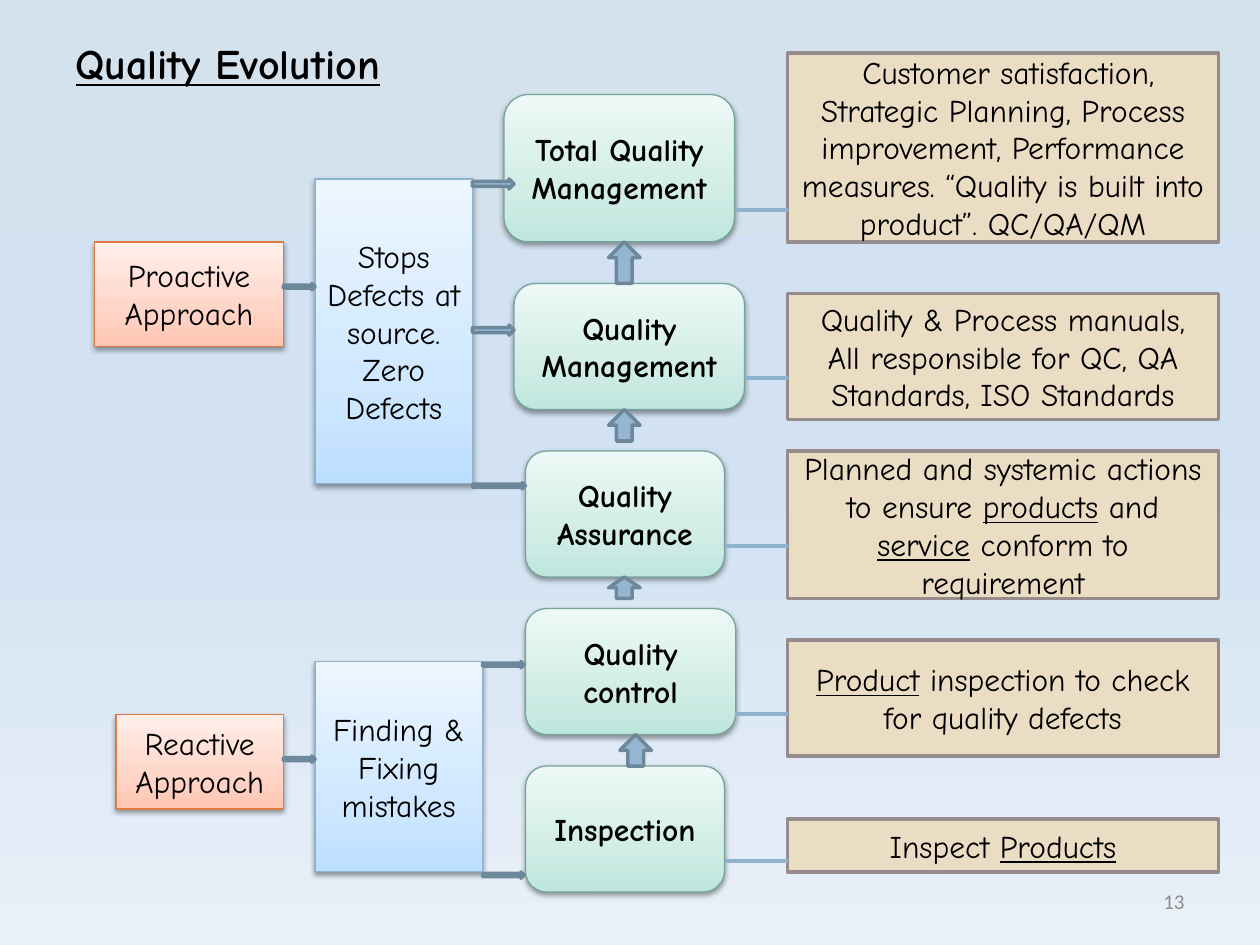
from dataclasses import dataclass

from lxml import etree
from pptx import Presentation
from pptx.dml.color import RGBColor
from pptx.enum import shapes, text
from pptx.oxml.ns import qn
from pptx.util import Inches, Pt

COLORS = {
    "text": "000000", "number": "8C8C8C", "note": "EBDDC3", "note_line": "968C8C",
    "arrow": "94B6D2", "arrow_line": "6D879B", "link": "8FB2CF",
}
BACKGROUND = [(0, "D4E2ED"), (50, "D2E2F2"), (100, "E8F0F8")]
FONT = "Comic Neue"
KIND = shapes.MSO_SHAPE


@dataclass(frozen=True)
class Style:
    kind: int
    stops: tuple
    line: str
    bold: bool = False


@dataclass(frozen=True)
class Box:
    x: float
    y: float
    w: float
    h: float
    words: str


@dataclass(frozen=True)
class Arrow:
    x: float
    y: float
    w: float
    h: float


def three_stops(*colors: str) -> tuple:
    return tuple(zip((0, 35, 100), colors))


STAGE = Style(KIND.ROUNDED_RECTANGLE, three_stops("BEE6DC", "D1EDE6", "EDF9F6"), "77A49A", True)
METHOD = Style(KIND.RECTANGLE, three_stops("BDDFFF", "D0E8FF", "EDF6FF"), "8FB2CF")
APPROACH = Style(KIND.RECTANGLE, three_stops("FFC5B1", "FFD5C8", "FFEFEA"), "DC7C42")

GRADIENT_BOXES = [
    (STAGE, [
        Box(4, 0.75, 1.83, 1.17, "Total Quality Management"),
        Box(4.08, 2.25, 1.83, 1, "Quality Management"),
        Box(4.17, 3.58, 1.58, 1, "Quality Assurance"),
        Box(4.17, 4.83, 1.67, 1, "Quality control"),
        Box(4.17, 6.08, 1.58, 1, "Inspection"),
    ]),
    (METHOD, [
        Box(2.5, 1.42, 1.25, 2.42, "Stops Defects at source.\nZero Defects"),
        Box(2.5, 5.25, 1.33, 1.67, "Finding & Fixing mistakes"),
    ]),
    (APPROACH, [
        Box(0.75, 1.92, 1.5, 0.83, "Proactive Approach"),
        Box(0.92, 5.67, 1.33, 0.75, "Reactive Approach"),
    ]),
]
NOTE_X, NOTE_W = 6.25, 3.42
NOTES = [
    (0.42, 1.5, " Customer satisfaction, Strategic Planning, Process improvement, "
                "Performance measures. “Quality is built into product”. QC/QA/QM"),
    (2.33, 1, "Quality & Process manuals, All responsible for QC, QA Standards, ISO Standards"),
    (3.58, 1.17, "Planned and systemic actions to ensure _products_ and _service_ "
                 "conform to requirement"),
    (5.08, 0.92, "_Product_ inspection to check for quality defects"),
    (6.5, 0.42, "Inspect _Products_"),
]
RIGHT_ARROWS = [
    Arrow(3.75, 1.42, 0.33, 0.08), Arrow(3.75, 2.58, 0.33, 0.08),
    Arrow(3.75, 3.83, 0.42, 0.05), Arrow(3.83, 5.25, 0.33, 0.05),
    Arrow(3.83, 6.92, 0.33, 0.05), Arrow(2.25, 2.25, 0.25, 0.05),
    Arrow(2.25, 6, 0.25, 0.05),
]
UP_ARROWS = [
    Arrow(4.83, 1.92, 0.25, 0.33), Arrow(4.83, 3.25, 0.25, 0.25),
    Arrow(4.83, 4.58, 0.25, 0.17), Arrow(4.92, 5.83, 0.25, 0.25),
]
LINKS = [(5.83, 1.67), (5.92, 3), (5.75, 4.33), (5.83, 5.67), (5.75, 6.83)]


def rgb(value: str) -> RGBColor:
    return RGBColor.from_string(value)


def set_gradient(fill, element, stops, angle: int) -> None:
    fill.gradient()
    fill.gradient_angle = angle
    stop_list = next(element.iter(qn("a:gsLst")))
    for old in list(stop_list):
        stop_list.remove(old)
    for position, color in stops:
        gs = etree.SubElement(stop_list, qn("a:gs"), pos=str(position * 1000))
        etree.SubElement(gs, qn("a:srgbClr"), val=color)


def add_shadow(sp) -> None:
    effects = sp._element.spPr.find(qn("a:effectLst"))
    outer = etree.SubElement(effects, qn("a:outerShdw"), blurRad="40000", dist="20000",
                             dir="5400000", rotWithShape="0")
    color = etree.SubElement(outer, qn("a:srgbClr"), val="000000")
    etree.SubElement(color, qn("a:alpha"), val="38000")


def add_shape(s, kind, x: float, y: float, w: float, h: float, line: str, width: float):
    sp = s.shapes.add_shape(kind, Inches(x), Inches(y), Inches(w), Inches(h))
    sp.shadow.inherit = False
    sp.line.color.rgb = rgb(line)
    sp.line.width = Pt(width)
    return sp


def write(tf, words: str, size: int = 18, bold: bool = False, color: str = "text",
          font: str = FONT, align=text.PP_ALIGN.CENTER,
          anchor=text.MSO_ANCHOR.MIDDLE) -> None:
    tf.word_wrap = True
    tf.vertical_anchor = anchor
    for i, row in enumerate(words.split("\n")):
        p = tf.add_paragraph() if i else tf.paragraphs[0]
        p.alignment = align
        p.font.name, p.font.size, p.font.bold = font, Pt(size), bold
        p.font.color.rgb = rgb(COLORS[color])
        for j, part in enumerate(row.split("_")):
            if part:
                r = p.add_run()
                r.text = part
                if j % 2:
                    r.font.underline = True


def add_gradient_box(s, box: Box, style: Style) -> None:
    sp = add_shape(s, style.kind, box.x, box.y, box.w, box.h, style.line, 0.75)
    set_gradient(sp.fill, sp._element, style.stops, 90)
    add_shadow(sp)
    write(sp.text_frame, box.words, bold=style.bold)


def add_note(s, y: float, h: float, words: str) -> None:
    sp = add_shape(s, KIND.RECTANGLE, NOTE_X, y, NOTE_W, h, COLORS["note_line"], 2)
    sp.fill.solid()
    sp.fill.fore_color.rgb = rgb(COLORS["note"])
    write(sp.text_frame, words)


def add_arrow(s, kind, a: Arrow) -> None:
    sp = add_shape(s, kind, a.x, a.y, a.w, a.h, COLORS["arrow_line"], 2)
    sp.fill.solid()
    sp.fill.fore_color.rgb = rgb(COLORS["arrow"])


def add_link(s, x: float, y: float) -> None:
    line = s.shapes.add_connector(shapes.MSO_CONNECTOR.STRAIGHT, Inches(x), Inches(y),
                                  Inches(NOTE_X), Inches(y))
    line.line.color.rgb = rgb(COLORS["link"])
    line.line.width = Pt(2.25)
    etree.SubElement(line._element.spPr, qn("a:effectLst"))


def main() -> None:
    prs = Presentation()
    prs.slide_width, prs.slide_height = Inches(10), Inches(7.5)
    s = prs.slides.add_slide(prs.slide_layouts[5])
    set_gradient(s.background.fill, s.element, BACKGROUND, 270)

    title = s.shapes.title
    title.left, title.top = Inches(0.5), Inches(0.25)
    title.width, title.height = Inches(3.33), Inches(0.5)
    write(title.text_frame, "_Quality Evolution_", 24, True,
          align=text.PP_ALIGN.LEFT, anchor=text.MSO_ANCHOR.TOP)
    title.text_frame.auto_size = text.MSO_AUTO_SIZE.NONE

    number = s.shapes.add_textbox(Inches(7.17), Inches(6.95), Inches(2.33), Inches(0.4))
    write(number.text_frame, "13", 12, color="number", font="Calibri",
          align=text.PP_ALIGN.RIGHT)

    for style, boxes in GRADIENT_BOXES:
        for box in boxes:
            add_gradient_box(s, box, style)
    for note in NOTES:
        add_note(s, *note)
    for arrow in RIGHT_ARROWS:
        add_arrow(s, KIND.RIGHT_ARROW, arrow)
    for link in LINKS:
        add_link(s, *link)
    for arrow in UP_ARROWS:
        add_arrow(s, KIND.UP_ARROW, arrow)
    prs.save("out.pptx")


if __name__ == "__main__":
    main()
